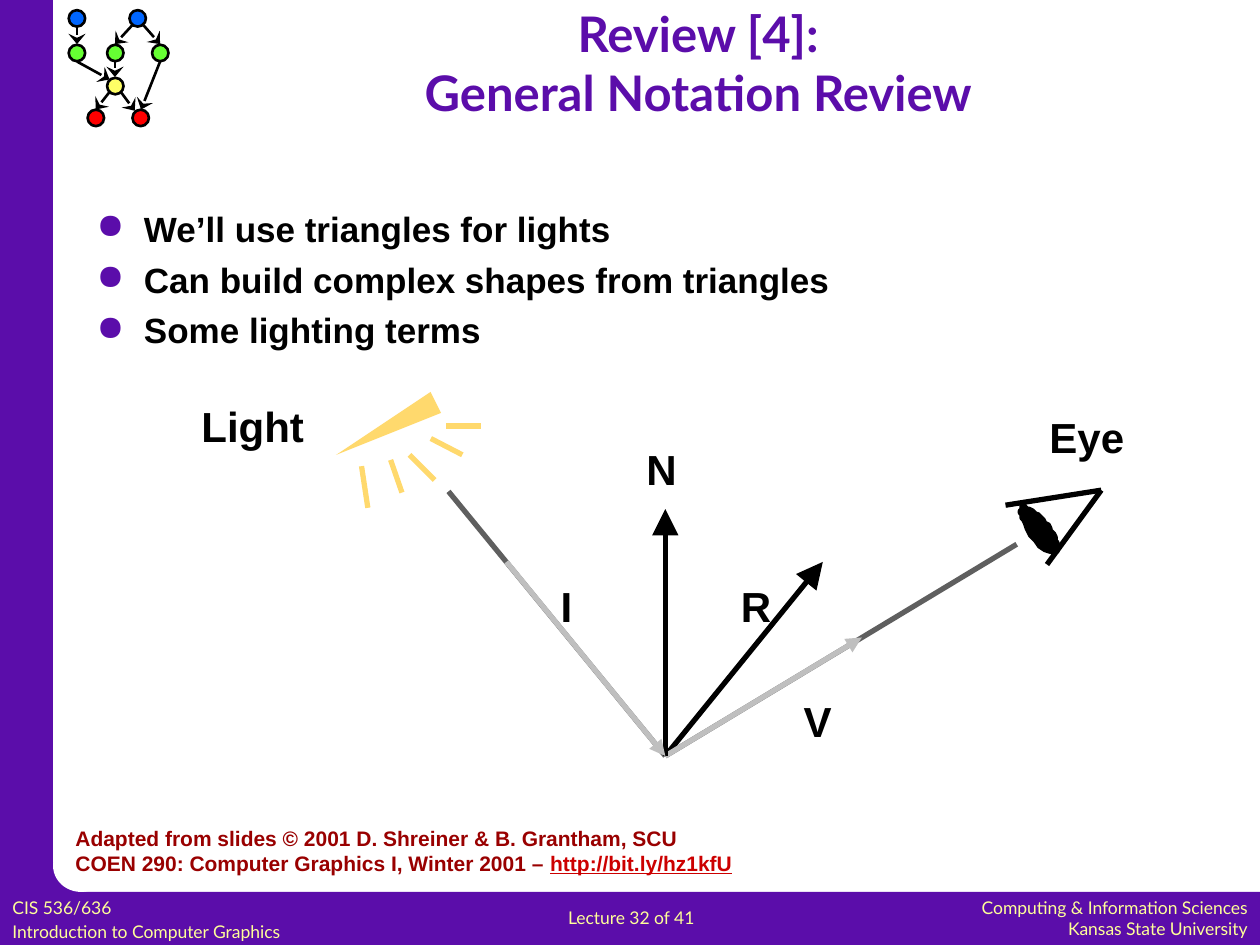
import pptx
import pptx.util
import pptx.dml.color
import pptx.enum.shapes
import pptx.enum.text
import pptx.oxml.ns
import lxml.etree

Pt = pptx.util.Pt
RGB = pptx.dml.color.RGBColor.from_string
ALIGN = pptx.enum.text.PP_ALIGN
SHAPE = pptx.enum.shapes.MSO_SHAPE
qn = pptx.oxml.ns.qn

COLORS = {
    "purple": "5B0DAA", "white": "FFFFFF", "black": "000000", "cream": "FFFF99",
    "green": "66FF33", "blue": "0066FF", "yellow": "FFFF66", "red": "FF0000",
    "dark gray": "5F5F5F", "light gray": "BFBFBF", "lamp": "FFD96D",
    "maroon": "990000", "link": "CC0000",
}

deck = pptx.Presentation()
deck.slide_width, deck.slide_height = Pt(720), Pt(540)
page = deck.slides.add_slide(deck.slide_layouts[6])


def add_line(start, end, color, width=3, arrow=None):
    """Draw a straight line; arrow is (type, width, length) of the head at its end."""
    line = page.shapes.add_connector(
        pptx.enum.shapes.MSO_CONNECTOR.STRAIGHT, *[Pt(v) for v in (*start, *end)])
    line.line.color.rgb = RGB(COLORS[color])
    line.line.width = Pt(width)
    if arrow:
        head = lxml.etree.SubElement(line.line._get_or_add_ln(), qn("a:tailEnd"))
        for key, value in zip(("type", "w", "len"), arrow):
            head.set(key, value)
    lxml.etree.SubElement(line._element.spPr, qn("a:effectLst"))


def add_text(place, lines, font, size, color, bold=False, align=ALIGN.LEFT,
             wrap=False, gap=0):
    box = page.shapes.add_textbox(*[Pt(v) for v in place])
    frame = box.text_frame
    frame.word_wrap = wrap
    if not wrap:
        frame.auto_size = pptx.enum.text.MSO_AUTO_SIZE.SHAPE_TO_FIT_TEXT
    for number, line in enumerate(lines):
        para = frame.add_paragraph() if number else frame.paragraphs[0]
        para.add_run().text = line
        para.alignment = align
        if number:
            para.space_before = Pt(gap)
        para.font.name, para.font.size, para.font.bold = font, Pt(size), bold
        para.font.color.rgb = RGB(COLORS[color])
    return frame


# Frame: bottom bar, side bar and the rounded inner corner
for kind, place, color in [
    (SHAPE.RECTANGLE, (0, 509.7, 720, 30.3), "purple"),
    (SHAPE.RECTANGLE, (0, 0, 30.3, 540), "purple"),
    (SHAPE.RECTANGLE, (14.5, 493, 32, 32), "purple"),
    (SHAPE.OVAL, (30.3, 479.7, 32, 30), "white"),
]:
    part = page.shapes.add_shape(kind, *[Pt(v) for v in place])
    part.shadow.inherit = False
    part.fill.solid()
    part.fill.fore_color.rgb = RGB(COLORS[color])
    part.line.fill.background()

# Small network in the corner
NODE = 9.4
for left, top, color in [
    (39.3, 25.6, "green"), (39.3, 5.8, "blue"), (61.2, 25.6, "green"),
    (74, 5.8, "blue"), (86.9, 25.6, "green"), (61.2, 44.5, "yellow"),
    (50.1, 62.7, "red"), (75.7, 62.7, "red"),
]:
    node = page.shapes.add_shape(SHAPE.OVAL, Pt(left), Pt(top), Pt(NODE), Pt(NODE))
    node.shadow.inherit = False
    node.fill.solid()
    node.fill.fore_color.rgb = RGB(COLORS[color])
    node.line.color.rgb = RGB(COLORS["black"])
    node.line.width = Pt(1.5)

for start, end in [
    ((44, 15.5), (44, 25.2)), ((75.6, 14.4), (65.7, 25.2)),
    ((82, 14.4), (91.5, 25.2)), ((44, 35.2), (62.6, 45.4)),
    ((65.7, 35.2), (65.7, 44)), ((91.5, 35.2), (80.6, 62.6)),
    ((69.1, 52.6), (77, 63.3)), ((62.6, 52.6), (54.7, 62.6)),
]:
    add_line(start, end, "black", 1.5, ("stealth", "lg", "med"))

# Footer
add_text((517, 509, 203, 31), ["Computing & Information Sciences", "Kansas State University"],
         "Lato", 10, "cream", align=ALIGN.RIGHT)
add_text((0, 509, 212.4, 31.7), ["CIS 536/636", "Introduction to Computer Graphics"],
         "Lato", 10, "cream", gap=2)
add_text((317.5, 514.8, 109.4, 19.4), ["Lecture 32 of 41"], "Lato", 10, "cream")

# Title and bullets
title = add_text((90, 5.8, 617.8, 59.8), ["Review [4]:", "General Notation Review"],
                 "Lato", 28, "purple", True, ALIGN.CENTER, True)
title.vertical_anchor = pptx.enum.text.MSO_ANCHOR.MIDDLE

body = add_text((48.2, 115, 612, 361), [
    "We’ll use triangles for lights",
    "Can build complex shapes from triangles",
    "Some lighting terms",
], "Arial", 20, "black", True, wrap=True, gap=5)
for para in body.paragraphs:
    props = para._p.get_or_add_pPr()
    props.set("marL", str(Pt(27)))
    props.set("indent", str(-Pt(27)))
    bullet_color = lxml.etree.Element(qn("a:buClr"))
    lxml.etree.SubElement(bullet_color, qn("a:srgbClr")).set("val", COLORS["purple"])
    bullet = lxml.etree.Element(qn("a:buChar"))
    bullet.set("char", "●")
    defaults = props.find(qn("a:defRPr"))
    defaults.addprevious(bullet_color)
    defaults.addprevious(bullet)

# Vectors meeting at the surface point
SURFACE = (380.2, 432)
BIG, MEDIUM = ("triangle", "lg", "lg"), ("triangle", "med", "med")
LIGHT_END, I_TAIL = (256.3, 280.8), (289.4, 321.1)
add_line(SURFACE, (470.2, 321.1), "black", arrow=BIG)
add_line((581, 311), SURFACE, "dark gray")
add_line(SURFACE, (492.5, 364.3), "light gray", arrow=MEDIUM)
add_line(SURFACE, LIGHT_END, "dark gray")
add_line(SURFACE, (380.2, 290.9), "black", arrow=BIG)
add_line(I_TAIL, SURFACE, "light gray", arrow=MEDIUM)

# Eye: two lids and a pupil whose Bezier sides are sampled
EYE_CORNER = (629.3, 280.1)
for lid_end in [(574.6, 288.7), (598.3, 322.6)]:
    add_line(EYE_CORNER, lid_end, "black")

pupil_start = (584.6, 287.3)
pupil_curves = [
    ((583.2, 290.2), (583.2, 293), (583.9, 295.9)),
    ((585.4, 297.4), (591.8, 314.6), (599.8, 314.6)),
    ((601.9, 316.1), (602.6, 316.1), (604.1, 313.9)),
    ((604.1, 311), (604.1, 312.5), (603.4, 308.9)),
    ((603.4, 308.2), (602.6, 307.4), (602.6, 307.4)),
    ((599.8, 301), (600.5, 302.4), (593.3, 294.5)),
    ((591.1, 291.6), (585.4, 291.6), pupil_start),
]
STEPS = 8
outline = []
anchor = pupil_start
for first, second, last in pupil_curves:
    for step in range(1, STEPS + 1):
        t = step / STEPS
        outline.append(tuple(
            (1 - t) ** 3 * a + 3 * (1 - t) ** 2 * t * b + 3 * (1 - t) * t ** 2 * c + t ** 3 * d
            for a, b, c, d in zip(anchor, first, second, last)))
    anchor = last

# Lamp wedge and its rays
wedge = [(246.2, 223.9), (192.2, 259.9), (252, 236.2)]
for points, color, outlined in [(outline, "black", True), (wedge, "lamp", False)]:
    builder = page.shapes.build_freeform(*points[0], scale=Pt(1))
    builder.add_line_segments(points[1:], close=True)
    figure = builder.convert_to_shape()
    figure.shadow.inherit = False
    figure.fill.solid()
    figure.fill.fore_color.rgb = RGB(COLORS[color])
    if outlined:
        figure.line.color.rgb = RGB(COLORS[color])
        figure.line.width = Pt(3)
    else:
        figure.line.fill.background()

for start, end in [
    ((206.6, 266.4), (210.2, 290.2)), ((223.2, 262.8), (229.7, 281.5)),
    ((234, 259.9), (248.4, 274.3)), ((254.9, 243.4), (275, 243.4)),
    ((246.2, 250.6), (264.2, 259.9)),
]:
    add_line(start, end, "lamp")

# Labels
for label, left, top, width in [
    ("Light", 108, 225.4, 73.4), ("Eye", 592.6, 231.8, 57.6), ("N", 362.2, 249.8, 32.4),
    ("I", 313.2, 328.3, 20.9), ("R", 416.2, 328.3, 32.4), ("V", 452.2, 393.8, 31),
]:
    add_text((left, top, width, 36), [label], "Arial", 24, "black", True)

# Credit
credit = add_text((36, 468, 396.7, 36), [
    "Adapted from slides © 2001 D. Shreiner & B. Grantham, SCU",
    "COEN 290: Computer Graphics I, Winter 2001 – ",
], "Arial", 12, "maroon", True)
span = credit.paragraphs[1].add_run()
span.text = "http://bit.ly/hz1kfU"
span.font.underline = True
span.font.color.rgb = RGB(COLORS["link"])

deck.save("out.pptx")
